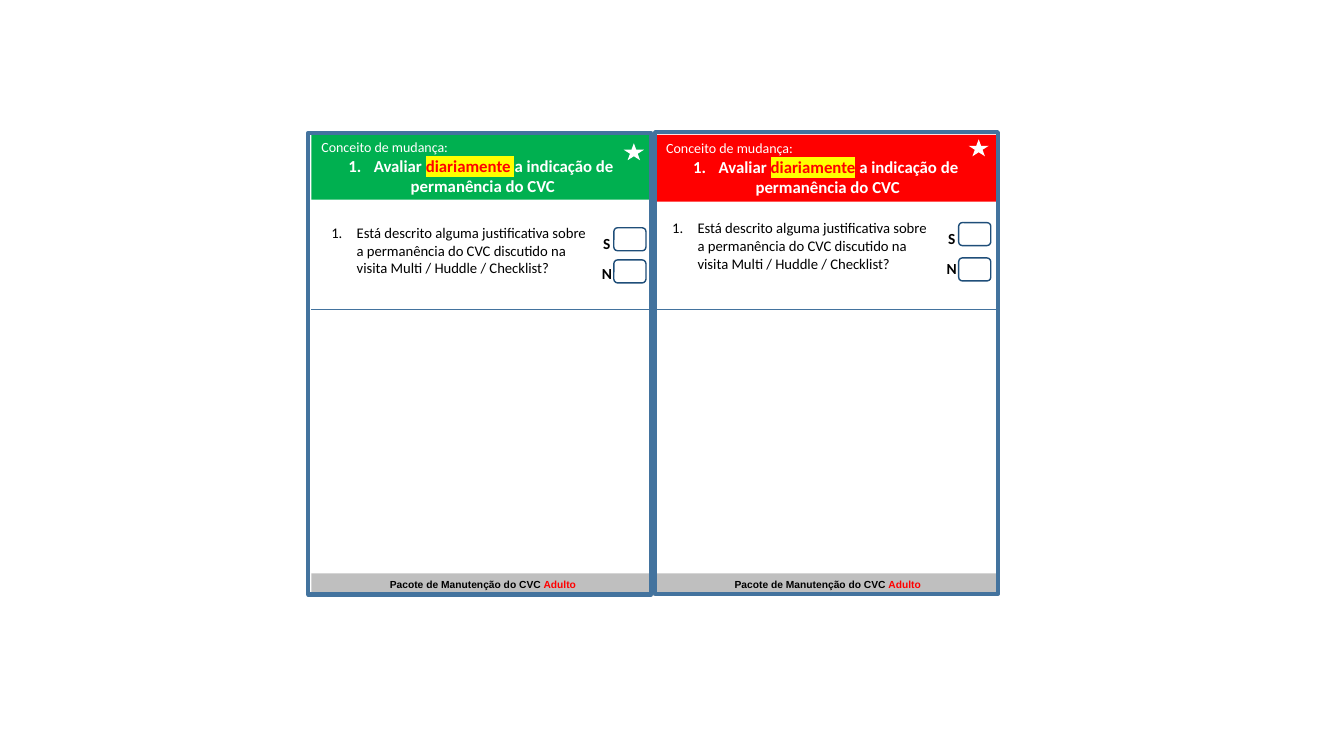
import pptx
import pptx.dml.color
import pptx.enum.shapes
import pptx.enum.text
import pptx.oxml.ns
import pptx.util
import lxml.etree

Cm, Pt = pptx.util.Cm, pptx.util.Pt
SHAPE = pptx.enum.shapes.MSO_SHAPE
ALIGN = pptx.enum.text.PP_ALIGN

# Content: spans are (text, style); positions are in centimetres
FOOTER = [("Pacote de Manutenção do CVC ", "footer"), ("Adulto", "footer_red")]
CARDS = [
    {"color": "green", "left": 7.85, "header_height": 1.63, "star_top": 3.61,
     "frame": (7.77, 3.35), "question": (8.10, 5.66), "box_tops": (5.74, 6.55),
     "gap_style": "title_marked",
     "question_text": "Está descrito alguma justificativa sobre a permanência do CVC "
                      "discutido na visita Multi / Huddle / Checklist?"},
    {"color": "red", "left": 16.54, "header_height": 1.68, "star_top": 3.51,
     "frame": (16.51, 3.33), "question": (16.69, 5.54), "box_tops": (5.61, 6.50),
     "gap_style": "title",
     "question_text": "Está descrito alguma justificativa sobre a permanência do CVC "
                      "discutido na visita Multi / Huddle / Checklist?"},
]
ANSWERS = [("S", 0.27), ("N", 1.02)]  # label and its drop below the question top

THEME = {
    "colors": {"green": "00B050", "red": "FF0000", "gray": "BFBFBF", "white": "FFFFFF",
               "black": "000000", "yellow": "FFFF00", "blue": "43739E", "navy": "1F4E79"},
    "spans": {
        "lead": {"name": "Calibri", "size": Pt(10), "color": "white"},
        "title": {"name": "Calibri", "size": Pt(12), "bold": True, "color": "white"},
        "title_red": {"name": "Calibri", "size": Pt(12), "bold": True, "color": "red",
                      "highlight": "yellow"},
        "title_marked": {"name": "Calibri", "size": Pt(12), "bold": True, "color": "white",
                         "highlight": "yellow"},
        "question": {"name": "Calibri", "size": Pt(10.5), "color": "black"},
        "answer": {"name": "Calibri", "size": Pt(11), "bold": True, "color": "black"},
        "footer": {"name": "Arial", "size": Pt(7.3), "bold": True, "color": "black"},
        "footer_red": {"name": "Arial", "size": Pt(7.3), "bold": True, "color": "red"},
    },
}

CARD_WIDTH = 8.64
HEADER_TOP, DIVIDER_TOP, FOOTER_TOP = 3.40, 7.80, 14.45


def rgb(name):
    return pptx.dml.color.RGBColor.from_string(THEME["colors"][name])


def add_box(page, kind, area, fill=None, line=None, weight=1):
    box = page.shapes.add_shape(kind, *map(Cm, area))
    box.shadow.inherit = False
    if fill:
        box.fill.solid()
        box.fill.fore_color.rgb = rgb(fill)
    else:
        box.fill.background()
    if line:
        box.line.color.rgb = rgb(line)
        box.line.width = Pt(weight)
    else:
        box.line.fill.background()
    return box


def add_span(para, text, style):
    span = para.add_run()
    span.text = text
    formats = dict(THEME["spans"][style])
    span.font.color.rgb = rgb(formats.pop("color"))
    highlight = formats.pop("highlight", None)
    for key, value in formats.items():
        setattr(span.font, key, value)
    if highlight:
        mark = lxml.etree.Element(pptx.oxml.ns.qn("a:highlight"))
        lxml.etree.SubElement(mark, pptx.oxml.ns.qn("a:srgbClr"),
                              val=THEME["colors"][highlight])
        span.font._element.find(pptx.oxml.ns.qn("a:solidFill")).addnext(mark)


def write(box, paras, inset=(0.25, 0.13)):
    """Fill a box with (alignment, numbered, spans) paragraphs."""
    frame = box.text_frame
    across, down = map(Cm, inset)
    formats = {"word_wrap": True, "vertical_anchor": pptx.enum.text.MSO_ANCHOR.MIDDLE,
               "margin_left": across, "margin_right": across,
               "margin_top": down, "margin_bottom": down}
    for key, value in formats.items():
        setattr(frame, key, value)
    for index, (align, numbered, spans) in enumerate(paras):
        para = frame.add_paragraph() if index else frame.paragraphs[0]
        para.alignment = align
        if numbered:
            props = para._p.get_or_add_pPr()
            props.set("marL", str(Cm(0.64)))
            props.set("indent", str(-Cm(0.64)))
            lxml.etree.SubElement(props, pptx.oxml.ns.qn("a:buAutoNum"), type="arabicPeriod")
        for text, style in spans:
            add_span(para, text, style)


def add_divider(page, left):
    divider = page.shapes.add_connector(
        pptx.enum.shapes.MSO_CONNECTOR.STRAIGHT,
        *map(Cm, (left, DIVIDER_TOP, left + CARD_WIDTH, DIVIDER_TOP)))
    divider.line.color.rgb = rgb("blue")
    divider.line.width = Pt(1)
    lxml.etree.SubElement(divider._element.spPr, pptx.oxml.ns.qn("a:effectLst"))


def add_card(page, card):
    left = card["left"]
    footer = add_box(page, SHAPE.RECTANGLE, (left, FOOTER_TOP, CARD_WIDTH, 0.56), "gray")
    write(footer, [(ALIGN.CENTER, False, FOOTER)])

    header = add_box(page, SHAPE.RECTANGLE,
                     (left, HEADER_TOP, CARD_WIDTH, card["header_height"]), card["color"])
    title = [("Avaliar ", "title"), ("diariamente", "title_red"),
             (" ", card["gap_style"]), ("a indicação de ", "title")]
    write(header, [(ALIGN.LEFT, False, [("Conceito de mudança:", "lead")]),
                   (ALIGN.CENTER, True, title),
                   (ALIGN.CENTER, False, [("permanência do CVC", "title")])])

    question_left, question_top = card["question"]
    question = page.shapes.add_textbox(*map(Cm, (question_left, question_top, 7.11, 1.3)))
    write(question, [(ALIGN.LEFT, True, [(card["question_text"], "question")])])

    for (answer, drop), box_top in zip(ANSWERS, card["box_tops"]):
        add_box(page, SHAPE.ROUNDED_RECTANGLE, (left + 7.62, box_top, 0.81, 0.58), line="navy")
        label = page.shapes.add_textbox(
            *map(Cm, (left + 7.14, question_top + drop, 0.61, 0.4)))
        write(label, [(ALIGN.CENTER, False, [(answer, "answer")])], inset=(0, 0))

    add_box(page, SHAPE.RECTANGLE, (*card["frame"], CARD_WIDTH, 11.63), line="blue", weight=3)
    add_divider(page, left)
    add_box(page, SHAPE.STAR_5_POINT, (left + 7.87, card["star_top"], 0.51, 0.43), "white")


def main():
    deck = pptx.Presentation()
    deck.slide_width, deck.slide_height = Cm(33.87), Cm(19.05)
    page = deck.slides.add_slide(deck.slide_layouts[6])
    for card in CARDS:
        add_card(page, card)
    deck.save("out.pptx")


if __name__ == "__main__":
    main()
